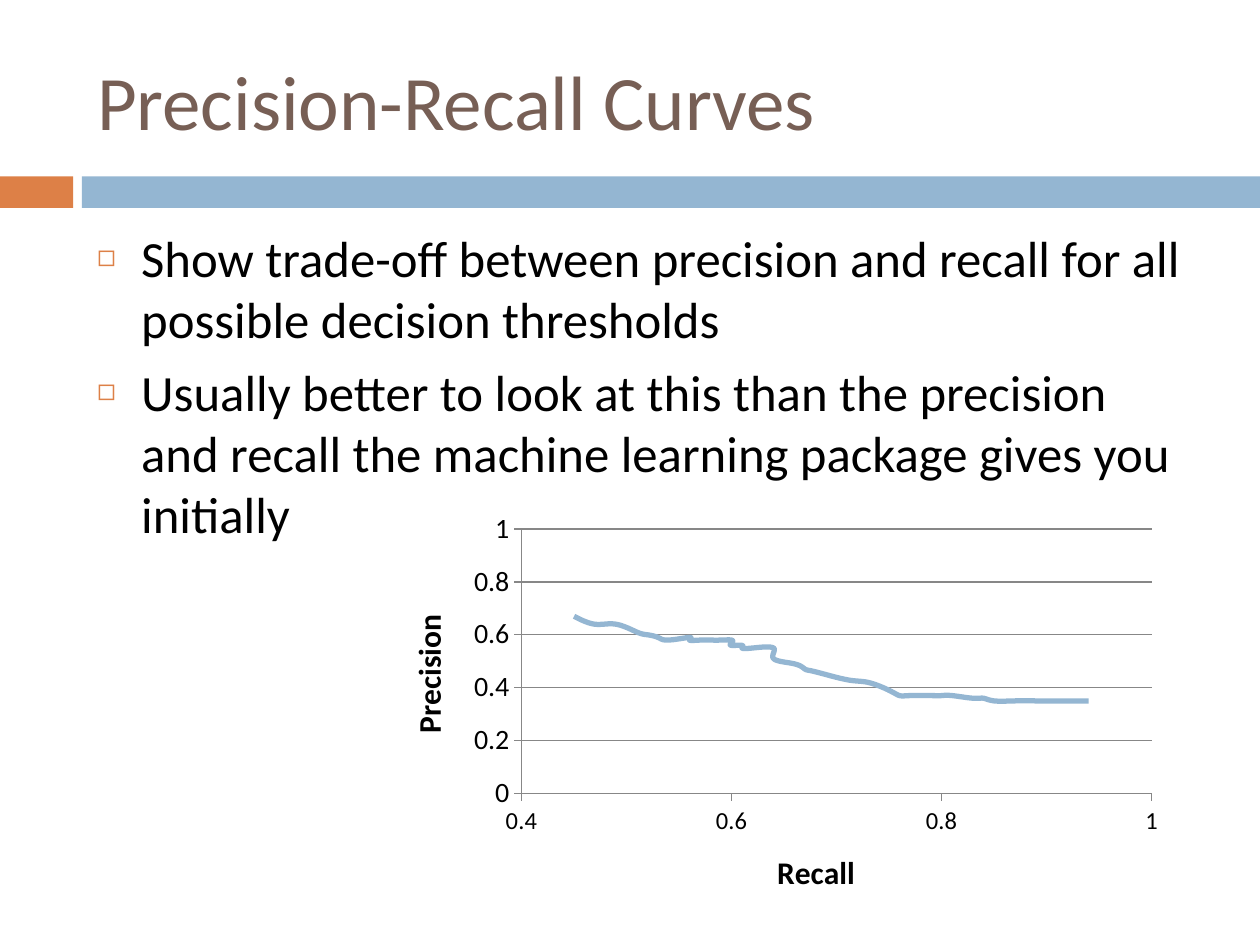
from lxml import etree
from pptx import Presentation
from pptx.chart.data import XyChartData
from pptx.dml.color import RGBColor
from pptx.enum.chart import XL_CHART_TYPE, XL_TICK_MARK
from pptx.enum.shapes import MSO_SHAPE
from pptx.enum.text import MSO_ANCHOR, MSO_AUTO_SIZE, PP_ALIGN
from pptx.oxml import parse_xml
from pptx.oxml.ns import nsdecls, qn
from pptx.util import Inches, Pt

ORANGE, BLUE, BROWN, BLACK, GRAY = "DD8047", "94B6D2", "775F55", "000000", "878787"


def color(value):
    return RGBColor.from_string(value)


def style_font(font, size, value, bold=False):
    font.name = "Calibri"
    font.size = Pt(size)
    font.bold = bold
    font.color.rgb = color(value)


deck = Presentation()
deck.slide_width, deck.slide_height = Inches(10), Inches(7.5)
page = deck.slides.add_slide(deck.slide_layouts[1])

# Divider band
for left, width, fill in [(0, 0.58, ORANGE), (0.65, 9.35, BLUE)]:
    bar = page.shapes.add_shape(
        MSO_SHAPE.RECTANGLE, Inches(left), Inches(1.4), Inches(width), Inches(0.25))
    bar.shadow.inherit = False
    bar.fill.solid()
    bar.fill.fore_color.rgb = color(fill)
    bar.line.fill.background()

# Title and bullet list
title, body = page.placeholders
texts = [
    (title, 0.25, 1.08, 44, BROWN, MSO_ANCHOR.MIDDLE, ["Precision-Recall Curves"]),
    (body, 1.75, 4.92, 29, BLACK, MSO_ANCHOR.TOP, [
        "Show trade-off between precision and recall for all possible decision thresholds",
        "Usually better to look at this than the precision and recall the machine "
        "learning package gives you initially"]),
]
for box, top, height, size, value, anchor, lines in texts:
    box.left, box.top = Inches(0.67), Inches(top)
    box.width, box.height = Inches(8.92), Inches(height)
    frame = box.text_frame
    frame.text = "\n".join(lines)
    frame.word_wrap = True
    frame.auto_size = MSO_AUTO_SIZE.NONE
    frame.vertical_anchor = anchor
    for para in frame.paragraphs:
        para.alignment = PP_ALIGN.LEFT
        for span in para.runs:
            style_font(span.font, size, value)

for para in body.text_frame.paragraphs:
    para.space_before = Pt(7)
    properties = para._p.get_or_add_pPr()
    properties.set("marL", str(Inches(0.35)))
    properties.set("indent", str(Inches(-0.35)))
    for bullet in [f'<a:buClr {nsdecls("a")}><a:srgbClr val="{ORANGE}"/></a:buClr>',
                   f'<a:buSzPct {nsdecls("a")} val="60000"/>',
                   f'<a:buChar {nsdecls("a")} char="◻"/>']:
        properties.append(parse_xml(bullet))

# Precision-recall chart; the first point is blank
recall = [
    None, 0.94, 0.94, 0.91, 0.89, 0.89, 0.87, 0.85, 0.84, 0.83, 0.81, 0.8, 0.79, 0.77,
    0.76, 0.75, 0.73, 0.71, 0.68, 0.67, 0.66, 0.66, 0.64, 0.64, 0.62, 0.62, 0.61,
    0.61, 0.61, 0.61, 0.61, 0.6, 0.6, 0.6, 0.6, 0.6, 0.6, 0.6, 0.6, 0.59, 0.58,
    0.57, 0.56, 0.56, 0.54, 0.53, 0.52, 0.51, 0.51, 0.49, 0.47, 0.45]
precision = [
    None, 0.35, 0.35, 0.35, 0.35, 0.35, 0.35, 0.35, 0.36, 0.36, 0.37, 0.37, 0.37, 0.37,
    0.37, 0.39, 0.42, 0.43, 0.46, 0.47, 0.49, 0.49, 0.51, 0.55, 0.55, 0.55, 0.55,
    0.55, 0.56, 0.56, 0.56, 0.56, 0.57, 0.57, 0.57, 0.57, 0.58, 0.58, 0.58, 0.58,
    0.58, 0.58, 0.58, 0.59, 0.58, 0.59, 0.6, 0.61, 0.61, 0.64, 0.64, 0.67]
data = XyChartData()
points = data.add_series("Series 1")
for x, y in zip(recall, precision):
    points.add_data_point(x, y)
chart = page.shapes.add_chart(
    XL_CHART_TYPE.XY_SCATTER_SMOOTH_NO_MARKERS,
    Inches(3), Inches(4), Inches(6.33), Inches(3.33), data).chart
chart.has_legend = False
chart.has_title = False
style_font(chart.font, 10, BLACK)

plot = chart.plots[0]
plot.vary_by_categories = False
curve = plot.series[0]
curve.format.line.color.rgb = color(BLUE)
curve.format.line.width = Pt(3)
series = curve._element
for blank in series.xpath(".//c:numCache/c:pt[@idx='0']"):
    blank.getparent().remove(blank)
for smooth in series.findall(qn("c:smooth")):
    smooth.set("val", "1")

axes = [(chart.category_axis, "Recall", 0.4, 14, 0, False),
        (chart.value_axis, "Precision", 0, 16, -90, True)]
for axis, name, minimum, size, angle, gridlines in axes:
    axis.minimum_scale, axis.maximum_scale = minimum, 1
    axis.major_unit = 0.2
    axis.major_tick_mark = XL_TICK_MARK.OUTSIDE
    axis.minor_tick_mark = XL_TICK_MARK.NONE
    axis.has_major_gridlines = gridlines
    axis.format.line.color.rgb = color(GRAY)
    axis.format.line.width = Pt(0.75)
    style_font(axis.tick_labels.font, size, BLACK)
    axis.tick_labels.number_format = "General"
    axis.tick_labels.number_format_is_linked = False
    frame = axis.axis_title.text_frame
    frame.text = name
    style_font(frame.paragraphs[0].runs[0].font, 18, BLACK, bold=True)
    frame._txBody.bodyPr.set("rot", str(angle * 60000))
gridline = chart.value_axis.major_gridlines.format.line
gridline.color.rgb = color(GRAY)
gridline.width = Pt(0.75)

# Fixed position of the plot inside the chart frame
area = chart._chartSpace.chart.plotArea
for old in area.findall(qn("c:layout")):
    area.remove(old)
layout = etree.Element(qn("c:layout"))
manual = etree.SubElement(layout, qn("c:manualLayout"))
for tag, value in [("layoutTarget", "inner"), ("xMode", "edge"), ("yMode", "edge"),
                   ("x", "0.18"), ("y", "0.06"), ("w", "0.79"), ("h", "0.63")]:
    etree.SubElement(manual, qn(f"c:{tag}")).set("val", value)
area.insert(0, layout)

deck.save("out.pptx")
